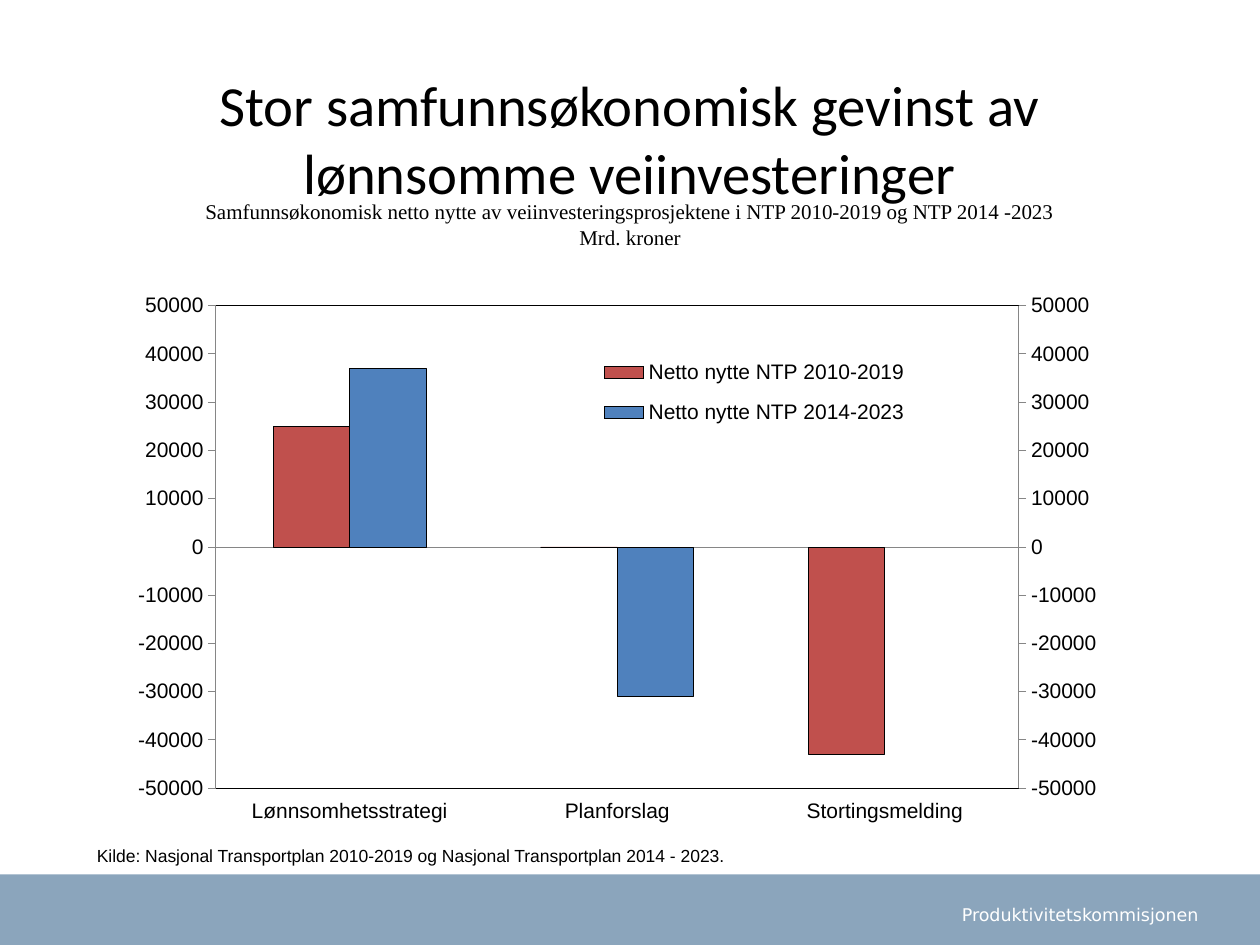
from dataclasses import dataclass

from pptx import Presentation
from pptx.chart.chart import Chart
from pptx.chart.data import CategoryChartData
from pptx.dml.color import RGBColor
from pptx.enum.chart import XL_CHART_TYPE as ChartType
from pptx.enum.chart import XL_LEGEND_POSITION as LegendPosition
from pptx.enum.chart import XL_TICK_LABEL_POSITION as LabelPosition
from pptx.enum.chart import XL_TICK_MARK as TickMark
from pptx.enum.shapes import MSO_SHAPE as Shape
from pptx.enum.text import MSO_ANCHOR as Anchor
from pptx.enum.text import MSO_AUTO_SIZE as AutoSize
from pptx.enum.text import PP_ALIGN as Align
from pptx.oxml import parse_xml
from pptx.oxml.ns import nsdecls
from pptx.util import Inches, Pt

COLORS = {
    "black": "000000",
    "white": "FFFFFF",
    "footer": "8BA5BC",
    "axis": "868686",
    "red": "C0504D",
    "blue": "4F81BD",
}
AXIS_LIMIT, AXIS_STEP = 50000, 10000
CATEGORIES = ["Lønnsomhetsstrategi", "Planforslag", "Stortingsmelding"]


@dataclass
class Label:
    box: tuple[float, float, float, float]
    lines: list[str]
    font: str
    size: float
    color: str = "black"
    align: Align = Align.LEFT
    anchor: Anchor = Anchor.TOP
    wrap: bool = True


@dataclass
class Bars:
    name: str
    values: list[float | None]
    color: str


TITLE = Label((0.82, 0.5, 8.35, 1),
              ["Stor samfunnsøkonomisk gevinst av lønnsomme veiinvesteringer"],
              "Calibri", 32.4, align=Align.CENTER)
LABELS = [
    Label((7.05, 7.12, 2.56, 0.27), ["Produktivitetskommisjonen"],
          "DejaVu Sans", 10, "white", Align.RIGHT, Anchor.MIDDLE),
    Label((1.24, 1.53, 7.52, 0.86),
          ["Samfunnsøkonomisk netto nytte av veiinvesteringsprosjektene i NTP 2010-2019 og NTP 2014 -2023",
           "Mrd. kroner"],
          "Times New Roman", 12, align=Align.CENTER),
    Label((0.67, 6.66, 5.23, 0.27),
          ["Kilde: Nasjonal Transportplan 2010-2019 og Nasjonal Transportplan 2014 - 2023."],
          "Arial", 10, wrap=False),
]
BARS = [
    Bars("Netto nytte NTP 2010-2019", [25000, 0, -43000], "red"),
    Bars("Netto nytte NTP 2014-2023", [37000, -31000, None], "blue"),
]


def rgb(name: str) -> RGBColor:
    return RGBColor.from_string(COLORS[name])


def fill_label(shape, label: Label) -> None:
    shape.left, shape.top, shape.width, shape.height = map(Inches, label.box)
    frame = shape.text_frame
    frame.text = "\n".join(label.lines)
    frame.word_wrap = label.wrap
    frame.auto_size = AutoSize.NONE
    frame.vertical_anchor = label.anchor
    for paragraph in frame.paragraphs:
        paragraph.alignment = label.align
        paragraph.font.name = label.font
        paragraph.font.size = Pt(label.size)
        paragraph.font.color.rgb = rgb(label.color)


def add_footer_band(slide) -> None:
    band = slide.shapes.add_shape(Shape.RECTANGLE, 0, Inches(6.94), Inches(10), Inches(0.59))
    band.shadow.inherit = False
    band.fill.solid()
    band.fill.fore_color.rgb = rgb("footer")
    band.line.fill.background()


def set_layout(parent, index: int, box: tuple[float, float, float, float], inner: bool = False) -> None:
    """Place a chart part by fractions of the chart's width and height."""
    for old in parent.xpath("./c:layout"):
        parent.remove(old)
    target = '<c:layoutTarget val="inner"/>' if inner else ""
    modes = '<c:xMode val="edge"/><c:yMode val="edge"/>'
    sizes = "".join(f'<c:{key} val="{value}"/>' for key, value in zip("xywh", box))
    parent.insert(index, parse_xml(
        f'<c:layout {nsdecls("c")}><c:manualLayout>{target}{modes}{sizes}</c:manualLayout></c:layout>'))


def line_properties(color: str) -> str:
    return (f'<c:spPr {nsdecls("c", "a")}><a:ln w="6350"><a:solidFill>'
            f'<a:srgbClr val="{COLORS[color]}"/></a:solidFill></a:ln></c:spPr>')


def add_right_axis(chart: Chart) -> None:
    """Move the last, empty series to a line plot with its own value axis."""
    area = chart.element.xpath(".//c:plotArea")[0]
    bar_plot = area.xpath("./c:barChart")[0]
    series = bar_plot.xpath("./c:ser")[-1]
    for flag in series.xpath("./c:invertIfNegative"):
        series.remove(flag)
    line_plot = parse_xml(
        f'<c:lineChart {nsdecls("c")}><c:grouping val="standard"/><c:varyColors val="0"/>'
        '<c:marker val="1"/><c:axId val="5001"/><c:axId val="5002"/></c:lineChart>')
    line_plot.insert(2, series)
    bar_plot.addnext(line_plot)
    category_axis = parse_xml(
        f'<c:catAx {nsdecls("c")}><c:axId val="5001"/>'
        '<c:scaling><c:orientation val="minMax"/></c:scaling><c:delete val="1"/>'
        '<c:axPos val="b"/><c:crossAx val="5002"/><c:crosses val="autoZero"/></c:catAx>')
    value_axis = parse_xml(
        f'<c:valAx {nsdecls("c")}><c:axId val="5002"/><c:scaling><c:orientation val="minMax"/>'
        f'<c:max val="{AXIS_LIMIT}"/><c:min val="{-AXIS_LIMIT}"/></c:scaling><c:delete val="0"/>'
        '<c:axPos val="r"/><c:numFmt formatCode="General" sourceLinked="0"/>'
        '<c:majorTickMark val="out"/><c:minorTickMark val="none"/><c:tickLblPos val="nextTo"/>'
        f'{line_properties("axis")}<c:crossAx val="5001"/><c:crosses val="max"/>'
        f'<c:crossBetween val="between"/><c:majorUnit val="{AXIS_STEP}"/></c:valAx>')
    last_axis = area.xpath("./c:valAx")[-1]
    last_axis.addnext(category_axis)
    category_axis.addnext(value_axis)
    area.append(parse_xml(line_properties("black")))
    set_layout(area, 0, (0.109, 0.054, 0.777, 0.838), inner=True)


def format_axes(chart: Chart) -> None:
    category, value = chart.category_axis, chart.value_axis
    category.tick_label_position = LabelPosition.LOW
    category.major_tick_mark = TickMark.NONE
    value.major_tick_mark = TickMark.OUTSIDE
    value.minimum_scale, value.maximum_scale = -AXIS_LIMIT, AXIS_LIMIT
    value.major_unit = AXIS_STEP
    value.tick_labels.number_format = "General"
    value.tick_labels.number_format_is_linked = False
    for axis in (category, value):
        axis.has_major_gridlines = False
        axis.format.line.color.rgb = rgb("axis")
        axis.format.line.width = Pt(0.5)


def format_legend(chart: Chart) -> None:
    chart.has_legend = True
    chart.legend.position = LegendPosition.RIGHT
    chart.legend.include_in_layout = False
    legend = chart.element.xpath(".//c:legend")[0]
    legend.insert(1, parse_xml(
        f'<c:legendEntry {nsdecls("c")}><c:idx val="{len(BARS)}"/><c:delete val="1"/></c:legendEntry>'))
    set_layout(legend, 2, (0.43, 0.12, 0.4, 0.17))


def add_benefit_chart(slide) -> None:
    data = CategoryChartData()
    data.categories = CATEGORIES
    for bars in BARS:
        data.add_series(bars.name, bars.values)
    data.add_series("Series 3", [None] * len(CATEGORIES))
    chart = slide.shapes.add_chart(ChartType.COLUMN_CLUSTERED, Inches(0.82), Inches(2.18),
                                   Inches(8.2), Inches(4.57), data).chart
    chart.has_title = False
    chart.font.name = "Arial"
    chart.font.size = Pt(12)
    chart.font.color.rgb = rgb("black")
    plot = chart.plots[0]
    plot.gap_width, plot.overlap = 150, 0
    plot.vary_by_categories = False
    for bars, series in zip(BARS, plot.series):
        series.invert_if_negative = False
        series.format.fill.solid()
        series.format.fill.fore_color.rgb = rgb(bars.color)
        series.format.line.color.rgb = rgb("black")
        series.format.line.width = Pt(0.5)
    format_axes(chart)
    format_legend(chart)
    add_right_axis(chart)


def main() -> None:
    presentation = Presentation()
    presentation.slide_width, presentation.slide_height = Inches(10), Inches(7.5)
    slide = presentation.slides.add_slide(presentation.slide_layouts[5])
    add_footer_band(slide)
    fill_label(slide.shapes.title, TITLE)
    for label in LABELS:
        fill_label(slide.shapes.add_textbox(0, 0, 0, 0), label)
    add_benefit_chart(slide)
    presentation.save("out.pptx")


if __name__ == "__main__":
    main()
